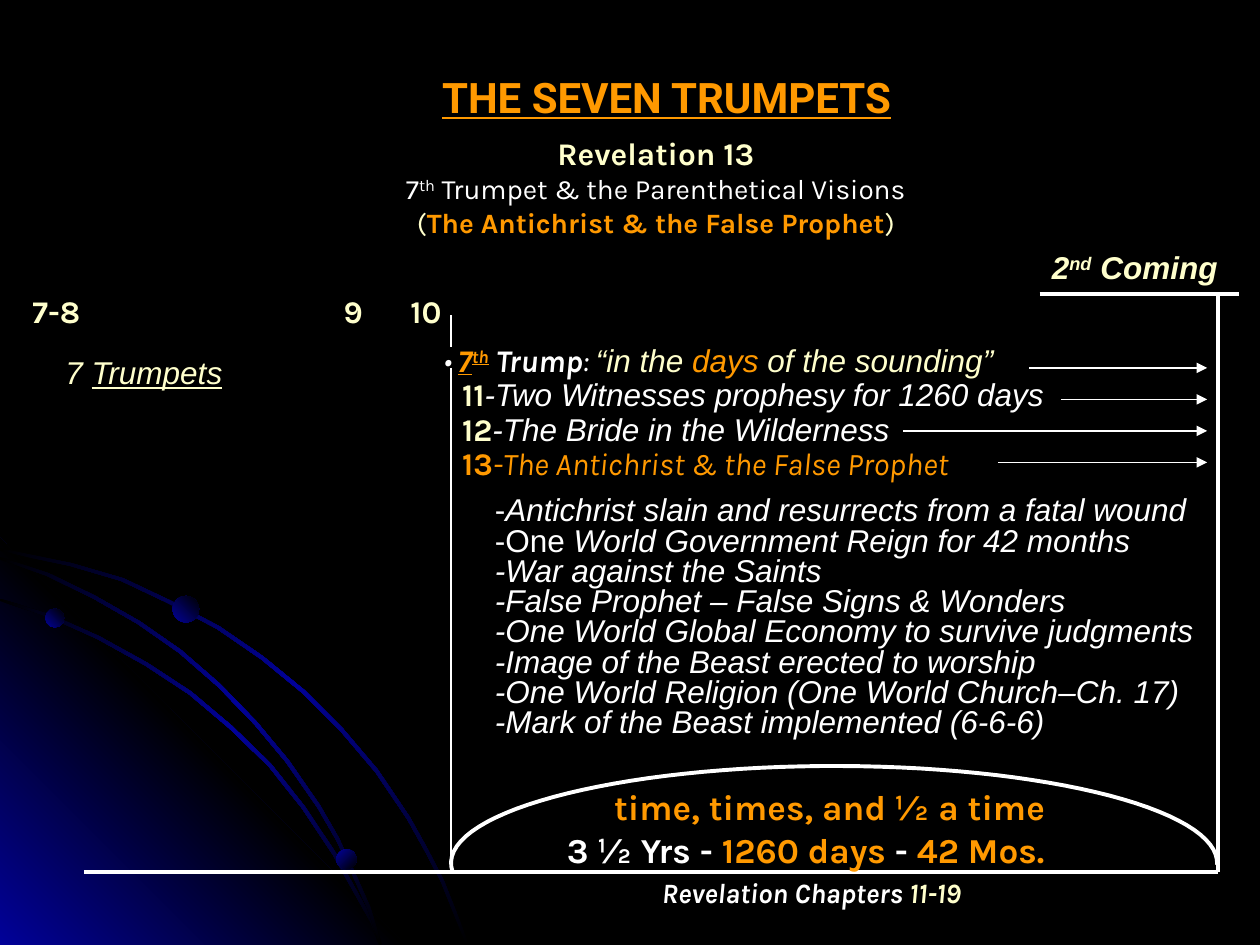
from dataclasses import dataclass, field
from math import cos, radians, sin

from pptx import Presentation
from pptx.dml.color import RGBColor
from pptx.enum import shapes, text
from pptx.oxml import parse_xml
from pptx.oxml.ns import nsdecls
from pptx.util import Inches, Pt

WHITE, CREAM, GOLD = "FFFFFF", "FFFFCC", "FF9900"
BLACK, BLUE = "000000", "010199"
LEFT, MID = text.PP_ALIGN.LEFT, text.PP_ALIGN.CENTER
TOP, CORE = text.MSO_ANCHOR.TOP, text.MSO_ANCHOR.MIDDLE


@dataclass
class Run:
    text: str
    hue: str = WHITE
    face: str = "Karla"
    size: float = 18
    fmt: dict = field(default_factory=dict)
    sup: bool = False


@dataclass
class Box:
    at: tuple
    lines: list
    align: int = LEFT
    anchor: int = CORE
    space: float = 1.0


@dataclass
class Line:
    start: tuple
    end: tuple
    width: float = 2.25
    arrow: bool = False


def rgb(code: str) -> RGBColor:
    return RGBColor.from_string(code)


def fade(shape, hues: list, angle: int) -> None:
    """Fill with evenly spaced gradient stops, without an outline."""
    step = 100000 // (len(hues) - 1)
    stops = "".join(
        f'<a:gs pos="{i * step}"><a:srgbClr val="{hue}"/></a:gs>'
        for i, hue in enumerate(hues))
    shape.fill.background()
    old = shape._element.spPr.find(
        "{http://schemas.openxmlformats.org/drawingml/2006/main}noFill")
    new = parse_xml(
        f'<a:gradFill {nsdecls("a")} rotWithShape="1"><a:gsLst>{stops}</a:gsLst>'
        f'<a:lin ang="{angle * 60000}" scaled="0"/></a:gradFill>')
    shape._element.spPr.replace(old, new)
    shape.line.fill.background()
    shape.shadow.inherit = False


def add_free(slide, points: list, close: bool = True):
    spots = [(Inches(x), Inches(y)) for x, y in points]
    pen = slide.shapes.build_freeform(*spots[0])
    pen.add_line_segments(spots[1:], close=close)
    return pen.convert_to_shape()


def add_band(slide, edge: list) -> None:
    """Draw a thin curved band below the given upper edge."""
    under = [(max(x - 0.02, 0), min(y + 0.02, 7.5)) for x, y in edge]
    fade(add_free(slide, edge + under[::-1]), [BLACK, BLUE, BLACK], 45)


def add_dot(slide, x: float, y: float, size: float, angle: int) -> None:
    dot = slide.shapes.add_shape(
        shapes.MSO_SHAPE.OVAL, *map(Inches, (x, y, size, size)))
    fade(dot, [BLUE, BLACK], angle)


def add_line(slide, line: Line) -> None:
    wire = slide.shapes.add_connector(
        shapes.MSO_CONNECTOR.STRAIGHT, *map(Inches, line.start + line.end))
    wire.line.color.rgb = rgb(WHITE)
    wire.line.width = Pt(line.width)
    if line.arrow:
        wire.line._get_or_add_ln().append(
            parse_xml(f'<a:tailEnd {nsdecls("a")} type="triangle"/>'))
    wire._element.spPr.append(parse_xml(f'<a:effectLst {nsdecls("a")}/>'))


def add_box(slide, box: Box) -> None:
    frame = slide.shapes.add_textbox(*map(Inches, box.at)).text_frame
    frame.word_wrap = True
    frame.vertical_anchor = box.anchor
    for i, runs in enumerate(box.lines):
        para = frame.add_paragraph() if i else frame.paragraphs[0]
        para.alignment, para.line_spacing = box.align, box.space
        for run in runs:
            part = para.add_run()
            part.text = run.text
            look = {"name": run.face, "size": Pt(run.size)} | run.fmt
            for key, value in look.items():
                setattr(part.font, key, value)
            part.font.color.rgb = rgb(run.hue)
            if run.sup:
                part._r.get_or_add_rPr().set("baseline", "30000")


B, I, U = {"bold": True}, {"italic": True}, {"underline": True}


def bold(words: str, hue: str = CREAM, size: float = 18) -> Run:
    return Run(words, hue, size=size, fmt=B)


def slant(words: str, hue: str = WHITE, fmt: dict = I, sup: bool = False) -> Run:
    return Run(words, hue, "Arial", fmt=I | fmt, sup=sup)


BANDS = [
    [(0, 4.35), (0.28, 4.41), (0.57, 4.47), (0.98, 4.59), (1.36, 4.77),
     (1.74, 4.97), (2.09, 5.21), (2.42, 5.48), (2.72, 5.78), (3, 6.11),
     (3.25, 6.48), (3.39, 6.73), (3.52, 6.98), (3.62, 7.23), (3.72, 7.49)],
    [(0, 4.75), (0.41, 4.88), (0.79, 5.05), (1.17, 5.26), (1.52, 5.49),
     (1.84, 5.76), (2.15, 6.06), (2.42, 6.4), (2.66, 6.76), (2.86, 7.12),
     (2.96, 7.3), (3.03, 7.49)],
    [(0, 4.42), (0.39, 4.55), (0.76, 4.73), (1.11, 4.93), (1.44, 5.16),
     (1.75, 5.43), (2.04, 5.73), (2.29, 6.03), (2.54, 6.39), (2.69, 6.65),
     (2.82, 6.93), (2.94, 7.2), (3.03, 7.49)],
]
DOTS = [(0.36, 4.83, 0.15, 315), (2.67, 6.74, 0.16, 45), (1.37, 4.73, 0.21, 315)]

LINES = [
    Line((0.67, 6.92), (9.67, 6.92)),
    Line((9.67, 2.33), (9.67, 6.92)),
    Line((8.25, 2.33), (9.83, 2.33)),
    Line((3.58, 2.5), (3.58, 2.75), 1.5),
    Line((3.58, 2.92), (3.58, 6.92), 1.5),
] + [Line((x, 2.92 + 0.25 * i), (9.58, 2.92 + 0.25 * i), 0.75, True)
     for i, x in enumerate((8.17, 8.42, 7.17, 7.92))]

EVENTS = [
    "-War against the Saints",
    "-False Prophet – False Signs & Wonders",
    "-One World Global Economy to survive judgments",
    "-Image of the Beast erected to worship",
    "-One World Religion (One World Church–Ch. 17)",
    "-Mark of the Beast implemented (6-6-6)",
]

BOXES = [
    Box((3.25, 0.52, 4.08, 0.5),
        [[Run("THE SEVEN TRUMPETS", GOLD, "Roboto", 24, B | U)]], MID),
    Box((2.33, 1.01, 5.75, 0.94), [
        [bold("Revelation 13")],
        [Run("7", size=16), Run("th", size=16, sup=True),
         Run(" Trumpet & the Parenthetical Visions", size=16)],
        [Run("(", CREAM, size=16),
         bold("The Antichrist & the False Prophet", GOLD, 16),
         Run(")", CREAM, size=16)]], MID),
    Box((8.25, 1.92, 1.6, 0.4), [
        [slant("2", CREAM, B), slant("nd", CREAM, B, True),
         slant(" Coming", CREAM, B)]]),
    *[Box((x, 2.27, 0.7, 0.4), [[bold(words)]])
      for x, words in ((0.16, "7-8"), (2.63, "9"), (3.16, "10"))],
    Box((0.42, 2.75, 1.58, 0.4),
        [[slant("7 ", CREAM), slant("Trumpets", CREAM, U)]]),
    Box((3.42, 2.66, 4.9, 0.4), [
        [Run("• ", fmt=I), Run("7", GOLD, fmt=B | I | U),
         Run("th", GOLD, fmt=B | I | U, sup=True), Run(" Trump", fmt=B | I),
         Run(": ", fmt=I), slant("“in the ", CREAM), slant("days", GOLD),
         slant(" of the sounding”", CREAM)]]),
    Box((3.57, 2.93, 5, 0.4),
        [[bold("11"), slant("-Two Witnesses prophesy for 1260 days")]]),
    Box((3.57, 3.24, 5.76, 0.65), [
        [bold("12"), slant("-The Bride in the Wilderness")],
        [bold("13", GOLD),
         Run("-The Antichrist & the False Prophet", GOLD, fmt=I)]],
        anchor=TOP, space=0.9),
    Box((3.83, 3.9, 5.92, 2.02), [
        [Run("-", face="Arial"),
         slant("Antichrist slain and resurrects from a fatal wound")],
        [Run("-One ", face="Arial"),
         slant("World Government Reign for 42 months")],
        *[[slant(event)] for event in EVENTS]], anchor=TOP, space=0.8),
    Box((4, 6.2, 5.17, 0.4), [[bold("time, times, and ½ a time", GOLD, 20)]], MID),
    Box((3.81, 6.54, 5.17, 0.4), [
        [bold("3 ½ Yrs - ", WHITE, 20), bold("1260 days", GOLD, 20),
         bold(" - ", WHITE, 20), bold("42 Mos.", GOLD, 20)]], MID),
    Box((4.73, 6.9, 3.42, 0.37), [
        [Run("Revelation Chapters ", size=16, fmt=B | I),
         Run("11-19", CREAM, size=16, fmt=B | I)]], MID),
]


def main() -> None:
    deck = Presentation()
    deck.slide_width, deck.slide_height = Inches(10), Inches(7.5)
    slide = deck.slides.add_slide(deck.slide_layouts[6])
    slide.background.fill.solid()
    slide.background.fill.fore_color.rgb = rgb(BLACK)

    glow = add_free(slide, [(0, 4.27), (3.22, 7.5), (0, 7.5)])
    fade(glow, [BLUE, BLACK, BLUE], 315)
    for edge in BANDS:
        add_band(slide, edge)
    for dot in DOTS:
        add_dot(slide, *dot)

    turns = [radians(a) for a in range(-1, 186, 3)]
    arch = add_free(slide, [(6.62 + 3.04 * cos(t), 6.85 - 0.77 * sin(t))
                            for t in turns], close=False)
    arch.fill.background()
    arch.line.color.rgb = rgb(WHITE)
    arch.line.width = Pt(2.25)
    arch.shadow.inherit = False

    for line in LINES:
        add_line(slide, line)
    for box in BOXES:
        add_box(slide, box)
    deck.save("out.pptx")


if __name__ == "__main__":
    main()
